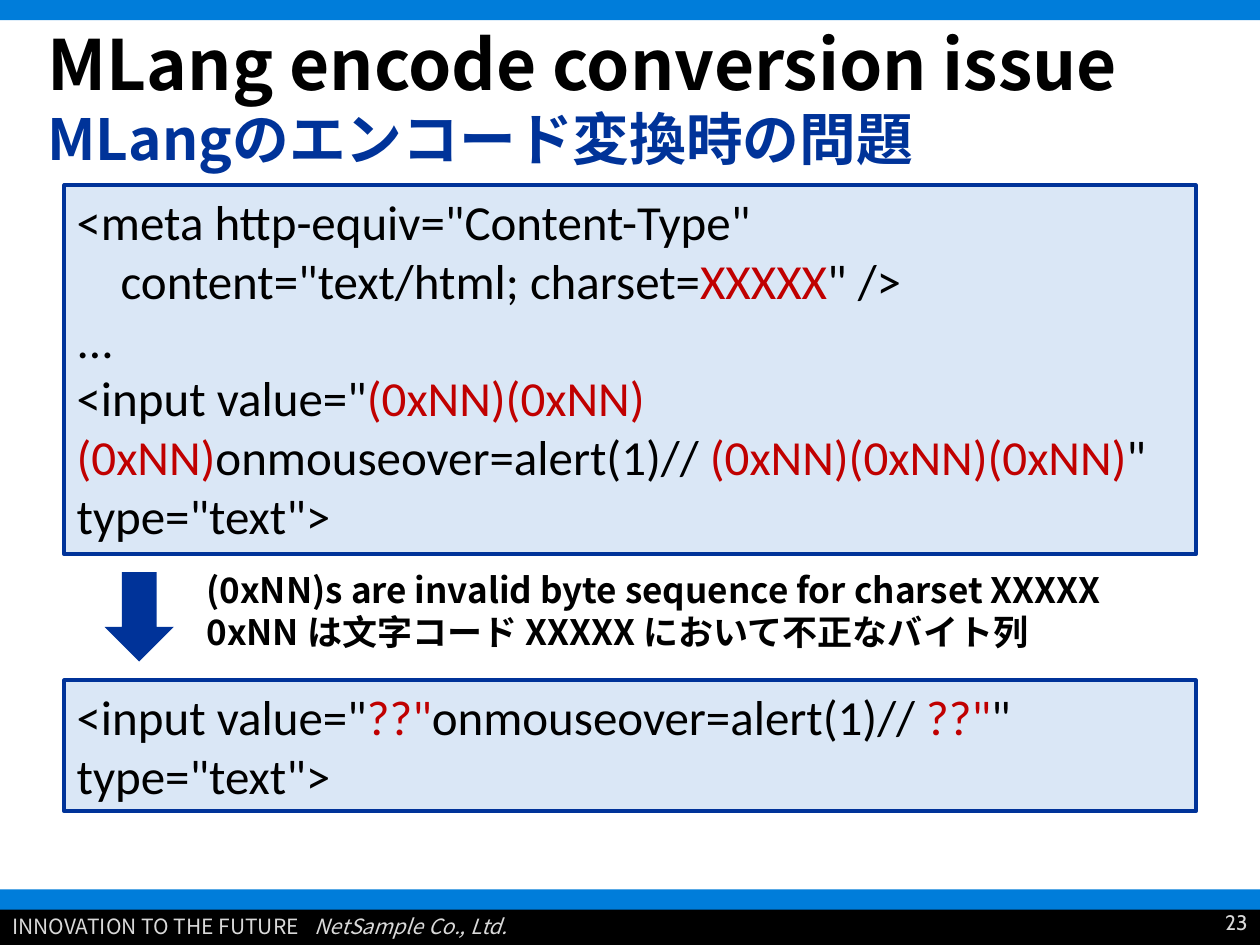
from pptx import Presentation
from pptx.dml.color import RGBColor
from pptx.enum.shapes import MSO_SHAPE as Shape
from pptx.enum.text import MSO_ANCHOR as Anchor, PP_ALIGN as Align
from pptx.oxml.ns import qn
from pptx.util import Inches, Pt

BLACK = RGBColor(0x00, 0x00, 0x00)
GRAY = RGBColor(0xD9, 0xD9, 0xD9)
BLUE = RGBColor(0x00, 0x7D, 0xDA)
NAVY = RGBColor(0x00, 0x33, 0x99)
PALE = RGBColor(0xDA, 0xE7, 0xF6)
RED = RGBColor(0xC0, 0x00, 0x00)

SANS, CODE, NUMBER = "Noto Sans CJK JP", "Calibri", "Cabin"
WIDTH, HEIGHT = 10, 7.5
BAND = 0.16
CODE_LEFT, CODE_WIDTH = 0.51, 8.98
BYTES = "(0xNN)" * 3
BROKEN = '??"'


def add_block(slide, box, fill, kind=Shape.RECTANGLE, line=None):
    shape = slide.shapes.add_shape(kind, *map(Inches, box))
    shape.shadow.inherit = False
    shape.fill.solid()
    shape.fill.fore_color.rgb = fill
    if line is None:
        shape.line.fill.background()
    else:
        shape.line.color.rgb = line
        shape.line.width = Pt(2.25)
    return shape


def add_textbox(slide, box):
    return slide.shapes.add_textbox(*map(Inches, box))


def write(shape, lines, size=12, font=SANS, color=BLACK, bold=False,
          italic=False, align=Align.LEFT, anchor=Anchor.TOP):
    """Fill shape with lines; a line is a list of (text, overrides) runs."""
    frame = shape.text_frame
    frame.word_wrap = True
    frame.vertical_anchor = anchor
    for index, line in enumerate(lines):
        paragraph = frame.paragraphs[0] if index == 0 else frame.add_paragraph()
        paragraph.alignment = align
        for text, overrides in line:
            run = paragraph.add_run()
            run.text = text
            run.font.size = Pt(overrides.get("size", size))
            run.font.color.rgb = overrides.get("color", color)
            run.font.name = font
            run.font.bold = bold
            run.font.italic = italic
            east_asian = run.font._element.makeelement(
                qn("a:ea"), {"typeface": font})
            run.font._element.find(qn("a:latin")).addnext(east_asian)


def plain(text, **overrides):
    return text, overrides


def red(text):
    return text, {"color": RED}


def input_tag(value):
    """Runs of an input element whose attribute value holds the given bytes."""
    return [plain('<input value="'), red(value),
            plain("onmouseover=alert(1)// "), red(value),
            plain('" type="text">')]


def add_frame(slide, top, bottom):
    """Header band at the top, footer bar from top to bottom."""
    add_block(slide, (0, 0, WIDTH, BAND), BLUE)
    add_block(slide, (0, top + 0.08, WIDTH, bottom - top - 0.08), BLACK)
    add_block(slide, (0, top, WIDTH, BAND), BLUE)
    text_top = top + 0.14
    write(add_textbox(slide, (0, text_top, 2.6, 0.3)),
          [[plain("INNOVATION TO THE FUTURE")]], color=GRAY)
    write(add_textbox(slide, (2.4, text_top, 4.92, 0.3)),
          [[plain("NetSample Co., Ltd.")]], color=GRAY, italic=True)
    write(add_textbox(slide, (7.67, top + 0.08, 2.33, 0.36)), [[plain("23")]],
          font=NUMBER, color=GRAY, align=Align.RIGHT, anchor=Anchor.MIDDLE)


def add_title(slide, box):
    write(add_textbox(slide, box),
          [[plain("MLang encode conversion issue")],
           [plain("MLangのエンコード変換時の問題", size=32.4, color=NAVY)]],
          size=39.6, bold=True, anchor=Anchor.MIDDLE)


def add_code(slide, top, height, lines):
    shape = add_block(slide, (CODE_LEFT, top, CODE_WIDTH, height), PALE, line=NAVY)
    write(shape, lines, size=28, font=CODE)
    return shape


def add_step(slide, left, top):
    """Arrow between the code boxes, with its explanation on the right."""
    add_block(slide, (left, top + 0.08, 0.55, 0.71), NAVY, Shape.DOWN_ARROW)
    write(add_textbox(slide, (left + 0.71, top, 8.27, 0.77)),
          [[plain("(0xNN)s are invalid byte sequence for charset XXXXX")],
           [plain("0xNN は文字コード XXXXX において不正なバイト列")]],
          size=20, bold=True)


def main():
    presentation = Presentation()
    presentation.slide_width, presentation.slide_height = Inches(WIDTH), Inches(HEIGHT)
    slide = presentation.slides.add_slide(presentation.slide_layouts[6])

    add_frame(slide, 7.06, HEIGHT)
    add_title(slide, (0.28, 0.14, 9.72, 1.25))
    source = add_code(slide, 1.47, 2.93, [
        [plain('<meta http-equiv="Content-Type"')],
        [plain('content="text/html; charset='), red("XXXXX"), plain('" />')],
        [plain("...")],
        input_tag(BYTES)])
    content_line = source.text_frame.paragraphs[1]
    content_line._p.get_or_add_pPr().set("marL", str(Inches(0.35)))
    add_step(slide, 0.83, 4.46)
    add_code(slide, 5.4, 1.04, [input_tag(BROKEN)])

    presentation.save("out.pptx")


if __name__ == "__main__":
    main()
